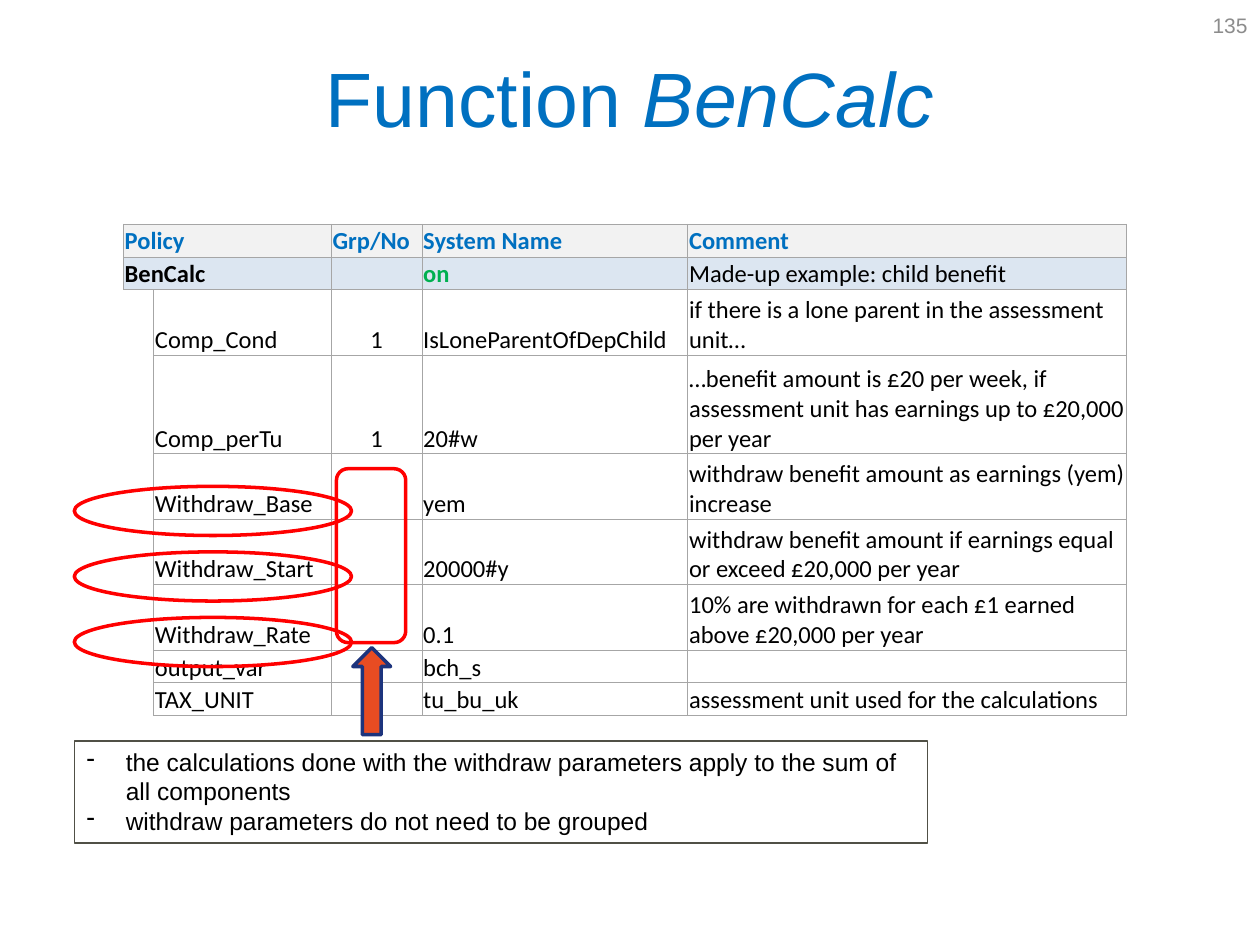
from dataclasses import dataclass

from lxml.etree import SubElement
from pptx import Presentation
from pptx.dml.color import RGBColor
from pptx.enum.shapes import MSO_SHAPE
from pptx.enum.text import MSO_ANCHOR, PP_ALIGN
from pptx.oxml.ns import qn
from pptx.util import Inches, Pt


@dataclass(frozen=True)
class Theme:
    heading: str = "0070C0"
    text: str = "000000"
    active: str = "00B050"
    number: str = "8C8C8C"
    header_fill: str = "F2F2F2"
    function_fill: str = "DCE6F1"
    white: str = "FFFFFF"
    grid: str = "A6A6A6"
    mark: str = "FF0000"
    arrow_fill: str = "E84C22"
    arrow_line: str = "1D347D"
    note_line: str = "505046"
    title_size: int = 44
    body_size: int = 14
    number_size: int = 12
    title_font: str = "Arial"
    table_font: str = "Calibri"


@dataclass(frozen=True)
class Box:
    left: float
    top: float
    width: float
    height: float

    def lengths(self) -> tuple:
        return tuple(Inches(v) for v in (self.left, self.top, self.width, self.height))


@dataclass(frozen=True)
class Outline:
    kind: MSO_SHAPE
    box: Box
    line: str
    weight: float = 2
    fill: str | None = None
    rotation: float = 0


@dataclass(frozen=True)
class Row:
    name: str
    group: str
    system: str
    comment: str
    lines: int = 1


THEME = Theme()
NO_GRID_STYLE = "{2D5ABB26-0587-4C30-8999-92F81FD0307C}"
LINE_HEIGHT = 0.26
COLUMN_WIDTHS = (0.24, 1.41, 0.72, 2.11, 3.48)
ROWS = (
    Row("Policy", "Grp/No", "System Name", "Comment"),
    Row("BenCalc", "", "on", "Made-up example: child benefit"),
    Row("Comp_Cond", "1", "IsLoneParentOfDepChild",
        "if there is a lone parent in the assessment unit…", 2),
    Row("Comp_perTu", "1", "20#w",
        "…benefit amount is £20 per week, if assessment unit has earnings "
        "up to £20,000 per year", 3),
    Row("Withdraw_Base", "", "yem", "withdraw benefit amount as earnings (yem) increase", 2),
    Row("Withdraw_Start", "", "20000#y",
        "withdraw benefit amount if earnings equal or exceed £20,000 per year", 2),
    Row("Withdraw_Rate", "", "0.1",
        "10% are withdrawn for each £1 earned above £20,000 per year", 2),
    Row("output_var", "", "bch_s", ""),
    Row("TAX_UNIT", "", "tu_bu_uk", "assessment unit used for the calculations"),
)
NOTES = (
    "the calculations done with the withdraw parameters apply to the sum of all components",
    "withdraw parameters do not need to be grouped",
)
WITHDRAW_RINGS = tuple(
    Outline(MSO_SHAPE.OVAL, Box(0.59, 3.86 + 2 * LINE_HEIGHT * i, 2.2, 0.39), THEME.mark)
    for i in range(3)
)
ARROW = Outline(MSO_SHAPE.DOWN_ARROW, Box(2.8, 5.14, 0.3, 0.69), THEME.arrow_line,
                fill=THEME.arrow_fill, rotation=180)
NOTE_BOX = Outline(MSO_SHAPE.RECTANGLE, Box(0.59, 5.88, 6.77, 0.81), THEME.note_line,
                   0.75, THEME.white)
GROUP_FRAME = Outline(MSO_SHAPE.ROUNDED_RECTANGLE, Box(2.67, 3.72, 0.55, 1.38), THEME.mark)


def apply_format(target, values: dict) -> None:
    for name, value in values.items():
        setattr(target, name, value)


def add_run(paragraph, text: str, color: str, size: float, font: str, **styles) -> None:
    run = paragraph.add_run()
    run.text = text
    apply_format(run.font, {"size": Pt(size), "name": font, **styles})
    run.font.color.rgb = RGBColor.from_string(color)


def set_borders(cell, sides: str) -> None:
    """Draw the grid line on the given sides (of L, R, T, B) and clear the others."""
    properties = cell._tc.get_or_add_tcPr()
    for side in "LRTB":
        line = SubElement(properties, qn(f"a:ln{side}"), w=str(Pt(0.5)))
        if side in sides:
            fill = SubElement(line, qn("a:solidFill"))
            SubElement(fill, qn("a:srgbClr"), val=THEME.grid)
        else:
            SubElement(line, qn("a:noFill"))


def set_fill(fill, color: str | None) -> None:
    if color is None:
        fill.background()
    else:
        fill.solid()
        fill.fore_color.rgb = RGBColor.from_string(color)


def cell_style(row: int, column: int) -> tuple[str, bool]:
    """Give the text colour and boldness of a cell."""
    if row == 0:
        return THEME.heading, True
    if row == 1 and column == 3:
        return THEME.active, True
    return THEME.text, row == 1 and column < 3


def fill_cell(cell, text: str, row: int, column: int) -> None:
    indent_cell = row > 1 and column == 0
    body_fill = THEME.white if indent_cell else None
    border_sides = ("RT" if row == 2 else "R") if indent_cell else "LRTB"
    set_borders(cell, border_sides)
    set_fill(cell.fill, {0: THEME.header_fill, 1: THEME.function_fill}.get(row, body_fill))
    apply_format(cell, {
        "margin_left": Inches(0.01), "margin_right": Inches(0.01),
        "margin_top": Inches(0.01), "margin_bottom": 0,
        "vertical_anchor": MSO_ANCHOR.MIDDLE if row < 2 else MSO_ANCHOR.BOTTOM,
    })
    paragraph = cell.text_frame.paragraphs[0]
    if row > 1 and column == 2:
        paragraph.alignment = PP_ALIGN.CENTER
    if text:
        color, bold = cell_style(row, column)
        add_run(paragraph, text, color, THEME.body_size, THEME.table_font, bold=bold)
    else:
        end = SubElement(paragraph._p, qn("a:endParaRPr"))
        end.set("sz", str(THEME.body_size * 100))


def add_parameter_table(slide) -> None:
    box = Box(0.98, 1.78, sum(COLUMN_WIDTHS), LINE_HEIGHT * sum(row.lines for row in ROWS))
    frame = slide.shapes.add_table(len(ROWS), len(COLUMN_WIDTHS), *box.lengths())
    table = frame.table
    apply_format(table, {"first_row": False, "horz_banding": False})
    table._tbl.tblPr.find(qn("a:tableStyleId")).text = NO_GRID_STYLE
    for column, width in zip(table.columns, COLUMN_WIDTHS):
        column.width = Inches(width)
    for i, row in enumerate(ROWS):
        table.rows[i].height = Inches(LINE_HEIGHT * row.lines)
        names = (row.name, "") if i < 2 else ("", row.name)
        for j, text in enumerate((*names, row.group, row.system, row.comment)):
            fill_cell(table.cell(i, j), text, i, j)
        if i < 2:
            table.cell(i, 0).merge(table.cell(i, 1))


def add_outline(slide, outline: Outline):
    shape = slide.shapes.add_shape(outline.kind, *outline.box.lengths())
    shape.shadow.inherit = False
    shape.rotation = outline.rotation
    set_fill(shape.fill, outline.fill)
    shape.line.color.rgb = RGBColor.from_string(outline.line)
    shape.line.width = Pt(outline.weight)
    return shape


def add_text_line(slide, box: Box, alignment: PP_ALIGN):
    frame = slide.shapes.add_textbox(*box.lengths()).text_frame
    apply_format(frame, {"word_wrap": True, "vertical_anchor": MSO_ANCHOR.MIDDLE})
    paragraph = frame.paragraphs[0]
    paragraph.alignment = alignment
    return paragraph


def add_notes_box(slide) -> None:
    frame = add_outline(slide, NOTE_BOX).text_frame
    apply_format(frame, {"word_wrap": True, "vertical_anchor": MSO_ANCHOR.TOP})
    for i, note in enumerate(NOTES):
        paragraph = frame.add_paragraph() if i else frame.paragraphs[0]
        paragraph.alignment = PP_ALIGN.LEFT
        properties = paragraph._p.get_or_add_pPr()
        properties.set("marL", str(Inches(0.31)))
        properties.set("indent", str(-Inches(0.31)))
        SubElement(properties, qn("a:buChar"), char="-")
        add_run(paragraph, note, THEME.text, THEME.body_size, THEME.title_font)


def main() -> None:
    presentation = Presentation()
    apply_format(presentation, {"slide_width": Inches(10), "slide_height": Inches(7.5)})
    slide = presentation.slides.add_slide(presentation.slide_layouts[6])
    add_parameter_table(slide)
    title = add_text_line(slide, Box(0.5, 0.3, 9, 0.93), PP_ALIGN.CENTER)
    for text, italic in (("Function ", False), ("BenCalc", True)):
        add_run(title, text, THEME.heading, THEME.title_size, THEME.title_font, italic=italic)
    number = add_text_line(slide, Box(7.67, 0, 2.33, 0.4), PP_ALIGN.RIGHT)
    add_run(number, "135", THEME.number, THEME.number_size, THEME.title_font)
    for outline in (*WITHDRAW_RINGS, ARROW):
        add_outline(slide, outline)
    add_notes_box(slide)
    add_outline(slide, GROUP_FRAME)
    presentation.save("out.pptx")


if __name__ == "__main__":
    main()
